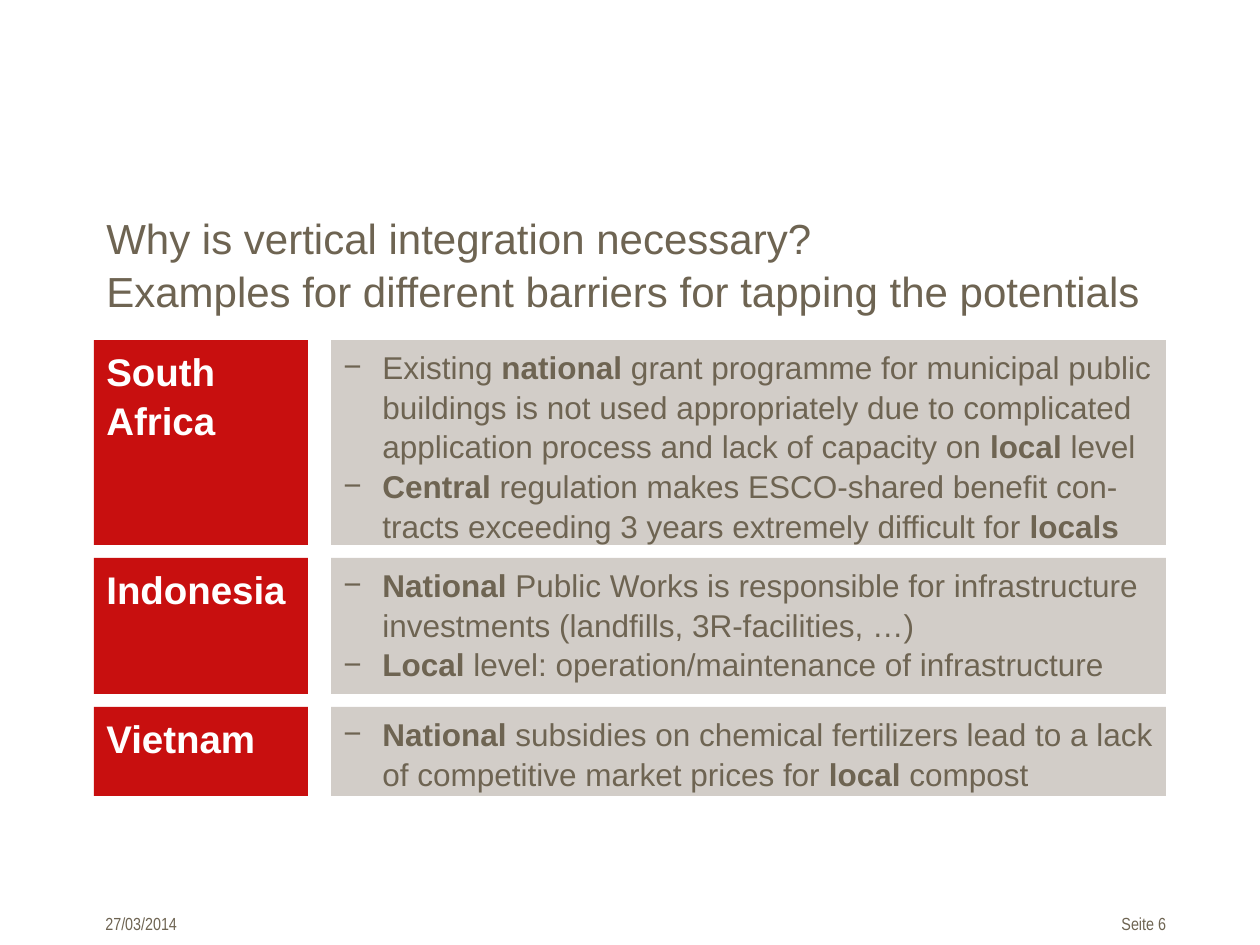
"""Slide on barriers to vertical integration in three countries."""
from lxml import etree
from pptx import Presentation
from pptx import util as u
from pptx.dml.color import RGBColor
from pptx.enum import shapes, text
from pptx.oxml.ns import qn

PX = 914400 / 126
RED = RGBColor(0xC8, 0x0F, 0x0F)
SAND = RGBColor(0xD2, 0xCD, 0xC8)
BROWN = RGBColor(0x6E, 0x64, 0x52)
WHITE = RGBColor(0xFF, 0xFF, 0xFF)
LEFT, RIGHT = text.PP_ALIGN.LEFT, text.PP_ALIGN.RIGHT


def add_box(x, y, w, h, fill=None):
    place = [round(n * PX) for n in (x, y, w, h)]
    if fill is None:
        box = slide.shapes.add_textbox(*place)
    else:
        box = slide.shapes.add_shape(shapes.MSO_SHAPE.RECTANGLE, *place)
        box.shadow.inherit = False
        box.fill.solid()
        box.fill.fore_color.rgb = fill
        box.line.fill.background()
    frame = box.text_frame
    frame.word_wrap = True
    frame.vertical_anchor = text.MSO_ANCHOR.TOP
    return frame


def add_run(para, words, size, color, bold=False, face="Arial"):
    run = para.add_run()
    run.text = words
    run.font.name = face
    run.font.size = u.Pt(size)
    run.font.bold = bold
    run.font.color.rgb = color


deck = Presentation()
deck.slide_width, deck.slide_height = u.Inches(10), u.Inches(7.5)
slide = deck.slides.add_slide(deck.slide_layouts[6])

title = add_box(94, 204, 1071, 86).paragraphs[0]
title.line_spacing = 1.05
add_run(title, "Why is vertical integration necessary?", 24, BROWN)
title.add_line_break()
add_run(title, "Examples for different barriers for tapping the potentials", 24, BROWN)

rows = [
    ("South Africa", 340, 205, [
        [("Existing ", False), ("national ", True),
         ("grant programme for municipal public buildings is not used appropriately "
          "due to complicated application process and lack of capacity on ", False),
         ("local ", True), ("level", False)],
        [("Central ", True),
         ("regulation makes ESCO-shared benefit con-tracts exceeding 3 years "
          "extremely difficult for ", False),
         ("locals", True)],
    ]),
    ("Indonesia", 558, 136, [
        [("National", True),
         (" Public Works is responsible for infrastructure investments "
          "(landfills, 3R-facilities, …)", False)],
        [("Local", True), (" level: operation/maintenance of infrastructure", False)],
    ]),
    ("Vietnam", 707, 89, [
        [("National ", True),
         ("subsidies on chemical fertilizers lead to a lack of competitive "
          "market prices for ", False),
         ("local ", True), ("compost", False)],
    ]),
]

for land, top, high, points in rows:
    label = add_box(94, top, 214, high, RED).paragraphs[0]
    label.alignment = LEFT
    label.line_spacing = 1.05
    add_run(label, land, 22, WHITE, True)
    frame = add_box(331, top, 835, high, SAND)
    for i, point in enumerate(points):
        para = frame.add_paragraph() if i else frame.paragraphs[0]
        para.alignment = LEFT
        para.line_spacing = 1.05
        props = para._p.get_or_add_pPr()
        props.set("marL", str(round(39 * PX)))
        props.set("indent", str(round(-39 * PX)))
        etree.SubElement(props, qn("a:buFont"), typeface="Arial")
        etree.SubElement(props, qn("a:buChar"), char="−")
        for words, bold in point:
            add_run(para, words, 18, BROWN, bold)

for words, x, wide, side in [("27/03/2014", 93, 179, LEFT), ("Seite 6", 1038, 128, RIGHT)]:
    frame = add_box(x, 907, wide, 34)
    if side == RIGHT:
        frame.margin_right = 0
    frame.paragraphs[0].alignment = side
    add_run(frame.paragraphs[0], words, 10, BROWN, face="Arial Narrow")

deck.save("out.pptx")
